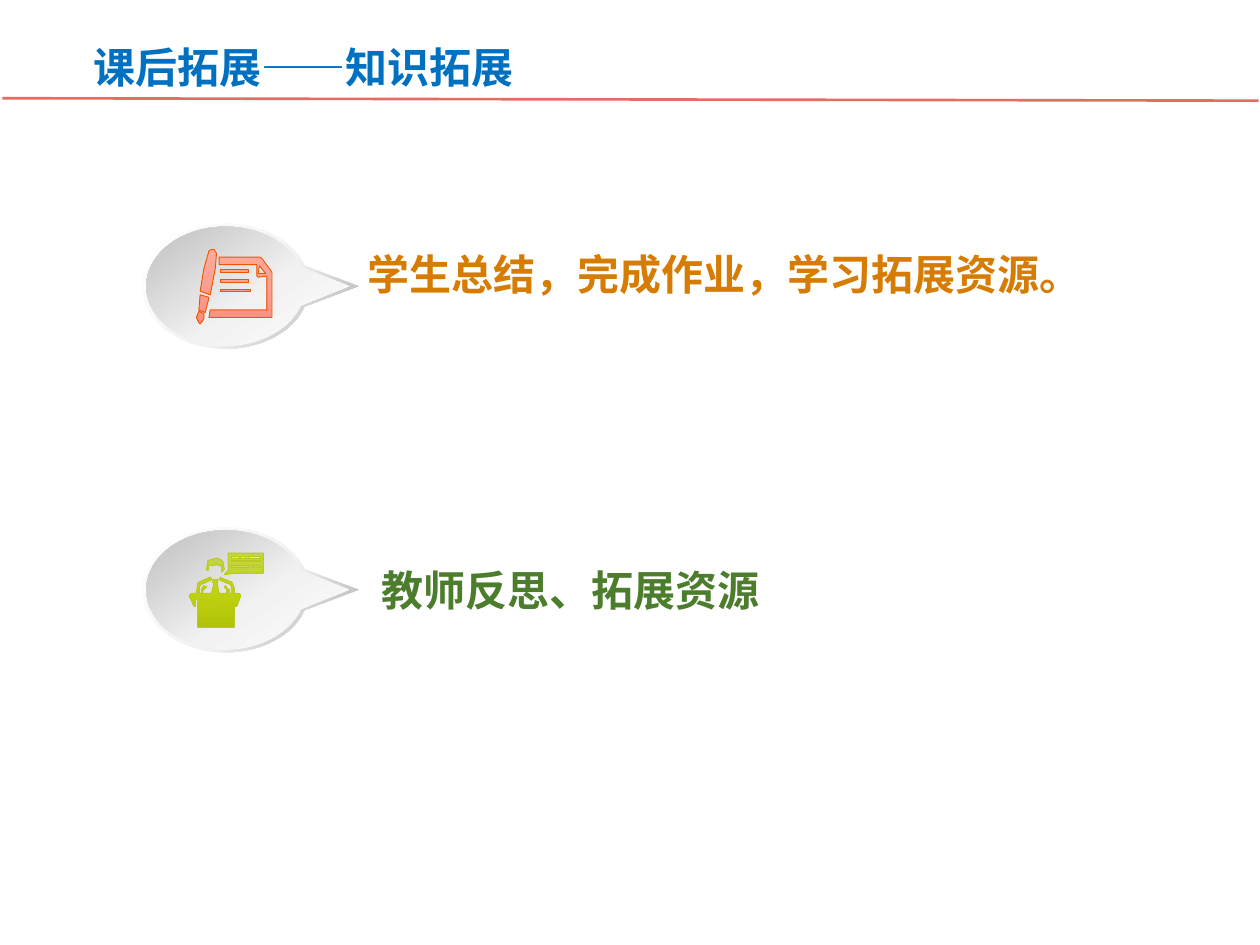
from math import cos, sin, radians

from lxml import etree
from pptx import Presentation
from pptx import util as u
from pptx.dml.color import RGBColor
from pptx.enum import text
from pptx.oxml import ns

FONT = "Noto Sans CJK SC"
FINE = u.Cm(0.001)   # grid of the bubbles
GRID = u.Cm(0.0254)  # grid of the icons

RIM = ([(0, "FFFFFF"), (55, "F2F2F2"), (100, "A6A6A6")], 45)
FACE = ([(0, "FFFFFF"), (43, "F2F2F2"), (100, "BFBFBF")], 235)
CORAL = ([(0, "FFAB9E"), (50, "FC9F90"), (100, "FD8E7C")], 90)
LIME = ([(0, "C4D44D"), (50, "C0D311"), (100, "B1C307")], 90)


def bar(left, top, right, bottom):
    return [(left, top), (right, top), (right, bottom), (left, bottom)]


NOTE = [
    # pen: barrel, grip, nib
    [(10, 1), (12, 0), (14, 0), (16, 3), (15, 15), (11, 36), (3, 33), (6, 15)],
    [(3, 36), (2, 48), (7, 50), (10, 38)],
    [(2, 49), (6, 51), (6, 55), (3, 59), (2, 58), (0, 54)],
    # sheet and folded corner
    [(11, 48), (10, 54), (60, 54), (60, 18), (52, 7), (50, 6), (18, 6),
     (18, 12), (48, 12), (48, 21), (49, 22), (56, 21), (56, 48)],
    [(55, 19), (49, 19), (50, 13)],
    bar(19, 16, 41, 18), bar(19, 24, 41, 26), bar(19, 32, 43, 33),
]

SPEAKER = [
    # speech balloon and its words
    [(31, 0), (59, 0), (59, 16), (36, 16), (28, 17), (31, 14)],
    *(bar(left, top, right, top + 1)
      for top, words in ((3, [(34, 40), (41, 45), (47, 57)]),
                         (6, [(34, 44), (46, 50), (51, 57)]),
                         (10, [(34, 48), (50, 57)]))
      for left, right in words),
    # hair
    [(15, 14), (16, 9), (19, 10), (22, 9), (24, 10), (26, 10), (26, 15),
     (28, 13), (27, 7), (25, 5), (22, 4), (18, 5), (15, 6), (14, 13)],
    # body and desk
    [(29, 28), (30, 29), (30, 32), (24, 32), (22, 23), (23, 23), (23, 21),
     (19, 21), (19, 23), (20, 23), (18, 32), (11, 32), (11, 29), (13, 28),
     (14, 27), (12, 26), (11, 27), (10, 29), (10, 32), (8, 32), (8, 28),
     (9, 25), (16, 22), (18, 21), (17, 19), (15, 20), (8, 23), (7, 24),
     (6, 32), (2, 32), (0, 34), (4, 42), (5, 42), (5, 37), (22, 37),
     (22, 38), (7, 38), (7, 59), (36, 59), (36, 42), (38, 42), (41, 34),
     (40, 32), (36, 32), (36, 28), (34, 23), (26, 20), (25, 19), (24, 21),
     (26, 22), (33, 25), (34, 28), (34, 32), (32, 32), (32, 29), (30, 28),
     (30, 27), (29, 26), (28, 27)],
]


def rgb(code):
    return RGBColor.from_string(code)


def blend(shape, stops, angle):
    """Fill a shape with a linear gradient; the angle runs clockwise."""
    shape.fill.gradient()
    grad = shape.fill._fill._gradFill
    row = grad.find(ns.qn("a:gsLst"))
    for old in list(row):
        row.remove(old)
    for pos, code in stops:
        stop = etree.SubElement(row, ns.qn("a:gs"), pos=str(pos * 1000))
        etree.SubElement(stop, ns.qn("a:srgbClr"), val=code)
    grad.find(ns.qn("a:lin")).set("ang", str(angle * 60000))


def draw(slide, left, top, rings, grid, fill, edge=None):
    """Build one outline from closed rings of points, given in grid units."""
    pen = slide.shapes.build_freeform(*rings[0][0], scale=grid)
    pen.add_line_segments(rings[0][1:], close=True)
    for ring in rings[1:]:
        pen.move_to(*ring[0])
        pen.add_line_segments(ring[1:], close=True)
    shape = pen.convert_to_shape(u.Cm(left), u.Cm(top))
    shape.shadow.inherit = False
    blend(shape, *fill)
    if edge:
        shape.line.color.rgb = rgb(edge)
        shape.line.width = u.Pt(0.5)
    else:
        shape.line.fill.background()


def bubble(slide, x, y):
    """Draw a rim and a face around a centre, both pointing right."""
    for wide, high, tip, fill in ((1.68, 1.26, 2.67, RIM),
                                  (1.6, 1.2, 2.49, FACE)):
        arc = [(wide * cos(radians(a)), high * sin(radians(a)))
               for a in range(19, 342, 2)]
        ring = [(round(px * 1000), round(py * 1000))
                for px, py in [(tip, 0)] + arc]
        draw(slide, x, y, [ring], FINE, fill)


def write(box, words, left, top, width, code):
    place = dict(left=left, top=top, width=width, height=1.28)
    for name, size in place.items():
        setattr(box, name, u.Cm(size))
    frame = box.text_frame
    frame.text = words
    para = frame.paragraphs[0]
    font = para.runs[0].font
    looks = (
        (frame, dict(word_wrap=True, vertical_anchor=text.MSO_ANCHOR.TOP,
                     auto_size=text.MSO_AUTO_SIZE.SHAPE_TO_FIT_TEXT)),
        (para, dict(alignment=text.PP_ALIGN.LEFT)),
        (font, dict(name=FONT, size=u.Pt(24), bold=True)),
    )
    for item, look in looks:
        for name, value in look.items():
            setattr(item, name, value)
    font.color.rgb = rgb(code)
    etree.SubElement(font._element, ns.qn("a:ea"), typeface=FONT)


def rule(slide):
    ends = [u.Cm(n) for n in (0.05, 1.98, 25.37, 2.03)]
    line = slide.shapes.add_connector(1, *ends)
    line.line.color.rgb = rgb("E36D61")
    line.line.width = u.Pt(1.5)
    etree.SubElement(line._element.spPr, ns.qn("a:effectLst"))


def main():
    deck = Presentation()
    deck.slide_width, deck.slide_height = u.Cm(25.4), u.Cm(19.05)
    slide = deck.slides.add_slide(deck.slide_layouts[5])
    rule(slide)
    write(slide.shapes.title, "课后拓展——知识拓展", 1.63, 0.71, 12.45, "0070C0")
    rows = (
        ("学生总结，完成作业，学习拓展资源。", 7.16, 4.88, 14.35, "D67C02",
         5.77, (3.96, 5.03, NOTE, GRID, CORAL, "EB5605")),
        ("教师反思、拓展资源", 7.44, 11.25, 10.01, "4B7D2C",
         11.89, (3.81, 11.15, SPEAKER, GRID, LIME, "B9CA1A")),
    )
    for words, left, top, width, code, mid, icon in rows:
        box = slide.shapes.add_textbox(0, 0, 0, 0)
        write(box, words, left, top, width, code)
        bubble(slide, 4.55, mid)
        draw(slide, *icon)
    deck.save("out.pptx")


if __name__ == "__main__":
    main()
